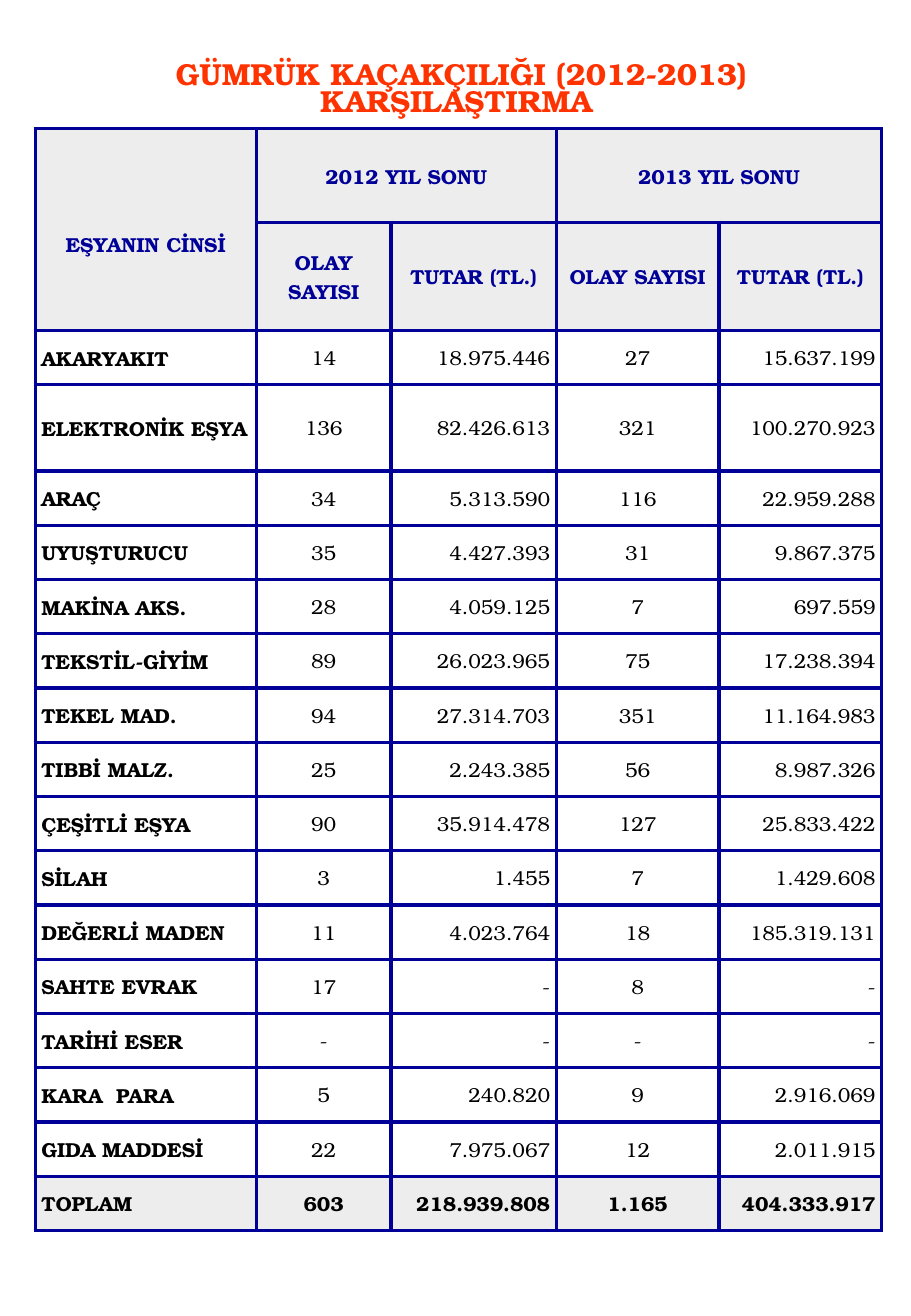
from dataclasses import dataclass

from lxml import etree
from pptx import Presentation
from pptx.dml.color import RGBColor
from pptx.enum.text import MSO_ANCHOR, MSO_AUTO_SIZE, PP_ALIGN
from pptx.oxml.ns import qn
from pptx.table import Table, _Cell
from pptx.text.text import TextFrame
from pptx.util import Inches, Pt

LEFT, CENTER, RIGHT = PP_ALIGN.LEFT, PP_ALIGN.CENTER, PP_ALIGN.RIGHT
MIDDLE = MSO_ANCHOR.MIDDLE
NO_AUTOFIT = MSO_AUTO_SIZE.NONE
FONT = "TeX Gyre Bonum"
COLORS = {"title": "FF3300", "navy": "000099", "black": "000000",
          "gray": "EDEDED", "white": "FFFFFF"}
BORDER_WIDTH = Pt(2.25)
COLUMN_WIDTHS = (1.82, 1.11, 1.36, 1.34, 1.34)
ALIGNMENTS = (LEFT, CENTER, RIGHT, CENTER, RIGHT)
TABLE_HEIGHT = 9.07
TALL_ROWS = {0: 0.77, 1: 0.89, 3: 0.71}


@dataclass
class Heading:
    row: int
    column: int
    text: str
    rows: int = 1
    columns: int = 1
    top_margin: float = 0


HEADINGS = [
    Heading(0, 0, "EŞYANIN CİNSİ", rows=2, top_margin=0.24),
    Heading(0, 1, "2012 YIL SONU", columns=2),
    Heading(0, 3, "2013 YIL SONU", columns=2),
    Heading(1, 1, "OLAY SAYISI"),
    Heading(1, 2, "TUTAR (TL.)"),
    Heading(1, 3, "OLAY SAYISI"),
    Heading(1, 4, "TUTAR (TL.)"),
]
GOODS = [
    ("AKARYAKIT", "14", "18.975.446", "27", "15.637.199"),
    ("ELEKTRONİK EŞYA", "136", "82.426.613", "321", "100.270.923"),
    ("ARAÇ", "34", "5.313.590", "116", "22.959.288"),
    ("UYUŞTURUCU", "35", "4.427.393", "31", "9.867.375"),
    ("MAKİNA AKS.", "28", "4.059.125", "7", "697.559"),
    ("TEKSTİL-GİYİM", "89", "26.023.965", "75", "17.238.394"),
    ("TEKEL MAD.", "94", "27.314.703", "351", "11.164.983"),
    ("TIBBİ MALZ.", "25", "2.243.385", "56", "8.987.326"),
    ("ÇEŞİTLİ EŞYA", "90", "35.914.478", "127", "25.833.422"),
    ("SİLAH", "3", "1.455", "7", "1.429.608"),
    ("DEĞERLİ MADEN", "11", "4.023.764", "18", "185.319.131"),
    ("SAHTE EVRAK", "17", "-", "8", "-"),
    ("TARİHİ ESER", "-", "-", "-", "-"),
    ("KARA  PARA", "5", "240.820", "9", "2.916.069"),
    ("GIDA MADDESİ", "22", "7.975.067", "12", "2.011.915"),
    ("TOPLAM", "603", "218.939.808", "1.165", "404.333.917"),
]


def write_text(frame: TextFrame, text: str, *, size: float = 12, color: str = "black",
               bold: bool = False, align: PP_ALIGN = CENTER, spacing: float = 1.0) -> None:
    """Write one formatted paragraph into a text frame."""
    para = frame.paragraphs[0]
    para.alignment = align
    para.line_spacing = spacing
    span = para.add_run()
    span.text = text
    span.font.name = FONT
    span.font.size = Pt(size)
    span.font.bold = bold
    span.font.color.rgb = RGBColor.from_string(COLORS[color])


def style_cell(cell: _Cell, fill: str) -> None:
    """Give a cell its borders, fill, margins and anchor."""
    properties = cell._tc.get_or_add_tcPr()
    for side in ("a:lnL", "a:lnR", "a:lnT", "a:lnB"):
        line = etree.SubElement(properties, qn(side), w=str(BORDER_WIDTH))
        solid = etree.SubElement(line, qn("a:solidFill"))
        etree.SubElement(solid, qn("a:srgbClr"), val=COLORS["navy"])
    cell.fill.solid()
    cell.fill.fore_color.rgb = RGBColor.from_string(COLORS[fill])
    cell.margin_left = cell.margin_right = Inches(0.05)
    cell.margin_top = cell.margin_bottom = 0
    cell.vertical_anchor = MIDDLE


def size_table(table: Table) -> None:
    """Set column widths and share the remaining height among ordinary rows."""
    for column, width in zip(table.columns, COLUMN_WIDTHS):
        column.width = Inches(width)
    ordinary = (TABLE_HEIGHT - sum(TALL_ROWS.values())) / (len(table.rows) - len(TALL_ROWS))
    for index, row in enumerate(table.rows):
        row.height = Inches(TALL_ROWS.get(index, ordinary))


def fill_table(table: Table) -> None:
    """Style every cell and write the headings and figures."""
    last = len(table.rows) - 1
    for index, row in enumerate(table.rows):
        for cell in row.cells:
            style_cell(cell, "gray" if index in (0, 1, last) else "white")
    for heading in HEADINGS:
        cell = table.cell(heading.row, heading.column)
        if heading.rows * heading.columns > 1:
            cell.merge(table.cell(heading.row + heading.rows - 1,
                                  heading.column + heading.columns - 1))
        cell.margin_top = Inches(heading.top_margin)
        write_text(cell.text_frame, heading.text, color="navy", bold=True)
    for index, values in enumerate(GOODS, start=2):
        for column, (value, align) in enumerate(zip(values, ALIGNMENTS)):
            write_text(table.cell(index, column).text_frame, value, align=align,
                       bold=column == 0 or index == last)


def main() -> None:
    """Build the customs smuggling comparison slide."""
    deck = Presentation()
    deck.slide_width, deck.slide_height = Inches(7.5), Inches(10.83)
    page = deck.slides.add_slide(deck.slide_layouts[5])
    title = page.shapes.title
    title.left, title.top = Inches(0.24), Inches(0.43)
    title.width, title.height = Inches(7.03), Inches(0.64)
    frame = title.text_frame
    frame.word_wrap = True
    frame.auto_size = NO_AUTOFIT
    frame.vertical_anchor = MIDDLE
    write_text(frame, " GÜMRÜK KAÇAKÇILIĞI (2012-2013) KARŞILAŞTIRMA",
               size=18, color="title", bold=True, spacing=0.74)
    box = page.shapes.add_table(len(GOODS) + 2, len(COLUMN_WIDTHS), Inches(0.29), Inches(1.06),
                                Inches(sum(COLUMN_WIDTHS)), Inches(TABLE_HEIGHT))
    table = box.table
    table.first_row = table.horz_banding = False
    size_table(table)
    fill_table(table)
    deck.save("out.pptx")


if __name__ == "__main__":
    main()
